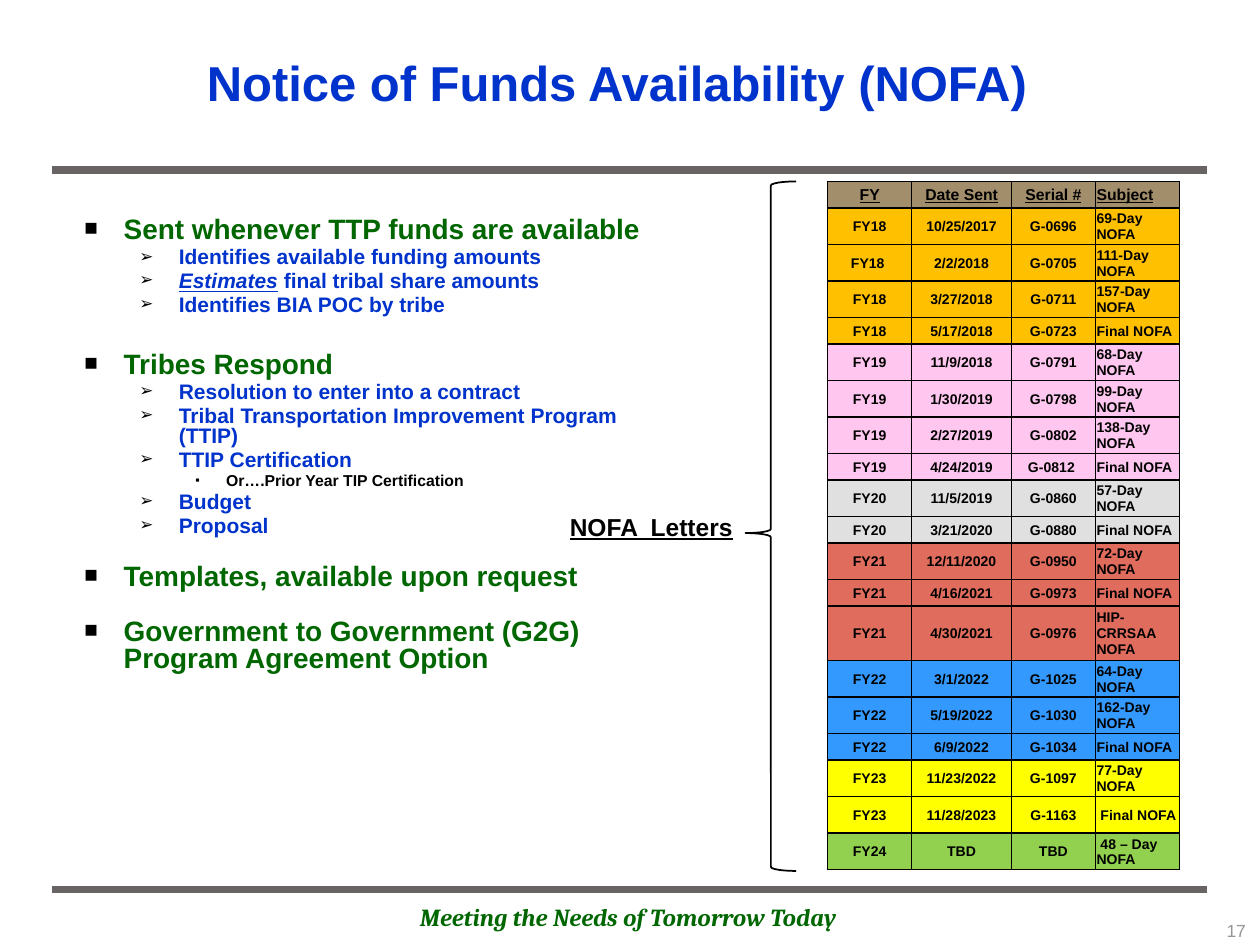
from lxml import etree
from pptx import Presentation
from pptx.dml.color import RGBColor
from pptx.enum import shapes, text
from pptx.oxml import ns
from pptx.util import Pt

BLACK, BLUE, GREEN, GREY = "000000", "0033CC", "006600", "696464"
LINE_SPACING, SPACE_RATIO = 0.8, 0.18

# Outline levels: size, colour, bullet, left indent, hanging indent
LEVELS = [
    (16, GREEN, "■", 22.5, 22.5),
    (12, BLUE, "➢", 54, 22.5),
    (9, BLACK, "▪", 81, 17.5),
]

# Outline entries: level, space before (None for the usual gap), runs
OUTLINE = [
    (0, 0, ["Sent whenever TTP funds are available"]),
    (1, None, ["Identifies available funding amounts"]),
    (1, None, ["*Estimates", " final tribal share amounts"]),
    (1, None, ["Identifies BIA POC by tribe"]),
    (0, 20.5, ["Tribes Respond"]),
    (1, None, ["Resolution to enter into a contract"]),
    (1, None, ["Tribal Transportation Improvement Program (TTIP)"]),
    (1, None, ["TTIP Certification"]),
    (2, None, ["Or….Prior Year TIP Certification"]),
    (1, None, ["Budget"]),
    (1, None, ["Proposal"]),
    (0, 16, ["Templates, available upon request"]),
    (0, 16, ["Government to Government (G2G) Program Agreement Option"]),
]

HEADINGS = ("FY", "Date Sent", "Serial #", "Subject")
YEAR_FILLS = {"FY18": "FFC000", "FY19": "FFC7EF", "FY20": "E1E0E0", "FY21": "DF6C5D",
              "FY22": "3399FF", "FY23": "FFFF00", "FY24": "92D050"}
LETTERS = [
    ("FY18", "10/25/2017", "G-0696", "69-Day NOFA"),
    ("FY18 ", "2/2/2018", "G-0705", "111-Day NOFA"),
    ("FY18", "3/27/2018", "G-0711", "157-Day NOFA"),
    ("FY18", "5/17/2018", "G-0723", "Final NOFA"),
    ("FY19", "11/9/2018", "G-0791", "68-Day NOFA"),
    ("FY19", "1/30/2019", "G-0798", "99-Day NOFA"),
    ("FY19", "2/27/2019", "G-0802", "138-Day NOFA"),
    ("FY19", "4/24/2019", "G-0812 ", "Final NOFA"),
    ("FY20", "11/5/2019", "G-0860", "57-Day NOFA"),
    ("FY20", "3/21/2020", "G-0880", "Final NOFA"),
    ("FY21", "12/11/2020", "G-0950", "72-Day NOFA"),
    ("FY21", "4/16/2021", "G-0973", "Final NOFA"),
    ("FY21", "4/30/2021", "G-0976", "HIP-CRRSAA NOFA"),
    ("FY22", "3/1/2022", "G-1025", "64-Day NOFA"),
    ("FY22", "5/19/2022", "G-1030", "162-Day NOFA"),
    ("FY22", "6/9/2022", "G-1034", "Final NOFA"),
    ("FY23", "11/23/2022", "G-1097", "77-Day NOFA"),
    ("FY23", "11/28/2023", "G-1163", " Final NOFA"),
    ("FY24", "TBD", "TBD", " 48 – Day NOFA"),
]
ROW_HEIGHTS = {"Subject": 15.1, "Final NOFA": 15.1, "HIP-CRRSAA NOFA": 31.2}
TWO_LINE_ROW = 20.9
COLUMN_WIDTHS = (48, 57, 48, 48)


def color(value):
    return RGBColor.from_string(value)


def place(shape, left, top, width, height):
    shape.left, shape.top, shape.width, shape.height = map(Pt, (left, top, width, height))


def add_run(paragraph, wording, size, hue, bold=True, italic=False, underline=False, face="Arial"):
    run = paragraph.add_run()
    run.text = wording
    font = run.font
    font.name, font.size, font.bold = face, Pt(size), bold
    font.italic, font.underline = italic, underline
    font.color.rgb = color(hue)


def add_label(slide, box, wording, align, **style):
    label = slide.shapes.add_textbox(*map(Pt, box))
    label.text_frame.word_wrap = True
    paragraph = label.text_frame.paragraphs[0]
    paragraph.alignment = align
    add_run(paragraph, wording, **style)


def add_rule(slide, y):
    rule = slide.shapes.add_connector(
        shapes.MSO_CONNECTOR.STRAIGHT, Pt(30), Pt(y), Pt(690), Pt(y))
    rule.line.color.rgb = color(GREY)
    rule.line.width = Pt(4.5)
    etree.SubElement(rule._element.spPr, ns.qn("a:effectLst"))


def set_bullet(paragraph, character, left, hanging):
    props = paragraph._p.get_or_add_pPr()
    props.set("marL", str(Pt(left)))
    props.set("indent", str(-Pt(hanging)))
    hue = etree.SubElement(props, ns.qn("a:buClr"))
    etree.SubElement(hue, ns.qn("a:srgbClr"), val=BLACK)
    etree.SubElement(props, ns.qn("a:buSzPct"), val="80000")
    etree.SubElement(props, ns.qn("a:buFont"), typeface="Arial")
    etree.SubElement(props, ns.qn("a:buChar"), char=character)


def fill_title(title):
    place(title, 103, 21, 499, 52)
    frame = title.text_frame
    frame.auto_size = text.MSO_AUTO_SIZE.NONE
    frame.vertical_anchor = text.MSO_ANCHOR.MIDDLE
    paragraph = frame.paragraphs[0]
    paragraph.alignment = text.PP_ALIGN.CENTER
    add_run(paragraph, "Notice of Funds Availability (NOFA)", 28, BLUE)


def fill_outline(body):
    place(body, 41, 121, 336, 385)
    frame = body.text_frame
    frame.auto_size = text.MSO_AUTO_SIZE.NONE
    for index, (level, gap, runs) in enumerate(OUTLINE):
        size, hue, character, left, hanging = LEVELS[level]
        entry = frame.add_paragraph() if index else frame.paragraphs[0]
        entry.level = level
        set_bullet(entry, character, left, hanging)
        entry.line_spacing = LINE_SPACING
        entry.space_before = Pt(size * SPACE_RATIO if gap is None else gap)
        for wording in runs:
            # An asterisk marks an emphasised run
            strong = wording.startswith("*")
            add_run(entry, wording.lstrip("*"), size, hue, italic=strong, underline=strong)


def set_borders(cell):
    props = cell._tc.get_or_add_tcPr()
    for index, side in enumerate(("lnL", "lnR", "lnT", "lnB")):
        border = etree.Element(ns.qn("a:" + side), w=str(Pt(1)))
        fill = etree.SubElement(border, ns.qn("a:solidFill"))
        etree.SubElement(fill, ns.qn("a:srgbClr"), val=BLACK)
        props.insert(index, border)


def fill_cell(cell, wording, fill, align, size, underline):
    cell.fill.solid()
    cell.fill.fore_color.rgb = color(fill)
    set_borders(cell)
    cell.margin_left = cell.margin_right = cell.margin_top = Pt(0.7)
    cell.margin_bottom = 0
    cell.vertical_anchor = text.MSO_ANCHOR.MIDDLE
    paragraph = cell.text_frame.paragraphs[0]
    paragraph.alignment = align
    add_run(paragraph, wording, size, BLACK, underline=underline)


def add_letters_table(slide):
    rows = [HEADINGS] + LETTERS
    heights = [ROW_HEIGHTS.get(row[-1], TWO_LINE_ROW) for row in rows]
    letters = slide.shapes.add_table(
        len(rows), len(HEADINGS), Pt(473), Pt(103.7),
        Pt(sum(COLUMN_WIDTHS)), Pt(sum(heights))).table
    letters.horz_banding = False
    for column, width in zip(letters.columns, COLUMN_WIDTHS):
        column.width = Pt(width)
    for r, (row, height) in enumerate(zip(rows, heights)):
        letters.rows[r].height = Pt(height)
        fill = YEAR_FILLS.get(row[0].strip(), "A28E6A")
        for c, wording in enumerate(row):
            align = text.PP_ALIGN.LEFT if c == 3 else text.PP_ALIGN.CENTER
            fill_cell(letters.cell(r, c), wording, fill, align, 8 if r else 9, r == 0)


def add_brace(slide):
    brace = slide.shapes.add_shape(
        shapes.MSO_SHAPE.LEFT_BRACE, Pt(426), Pt(103.7), Pt(29), Pt(394))
    brace.adjustments[0], brace.adjustments[1] = 0.08, 0.51
    brace.shadow.inherit = False
    brace.fill.background()
    brace.line.color.rgb = color(BLACK)
    brace.line.width = Pt(1)


def main():
    deck = Presentation()
    deck.slide_width, deck.slide_height = Pt(720), Pt(540)
    slide = deck.slides.add_slide(deck.slide_layouts[1])

    # Frame: rules, motto and page number
    for y in (508.3, 97.2):
        add_rule(slide, y)
    add_label(slide, (88.5, 512, 541, 24.5), "Meeting the Needs of Tomorrow Today",
              text.PP_ALIGN.CENTER, size=14, hue=GREEN, italic=True, face="Cambria")
    add_label(slide, (629, 522, 90, 24), "17", text.PP_ALIGN.RIGHT,
              size=10, hue="969696", bold=False)

    # Title and outline
    fill_title(slide.shapes.title)
    fill_outline(slide.placeholders[1])

    # Letters sent, with their caption and brace
    add_label(slide, (318.5, 289, 126, 24.5), "NOFA  Letters", text.PP_ALIGN.LEFT,
              size=14, hue=BLACK, underline=True)
    add_letters_table(slide)
    add_brace(slide)

    deck.save("out.pptx")


if __name__ == "__main__":
    main()
